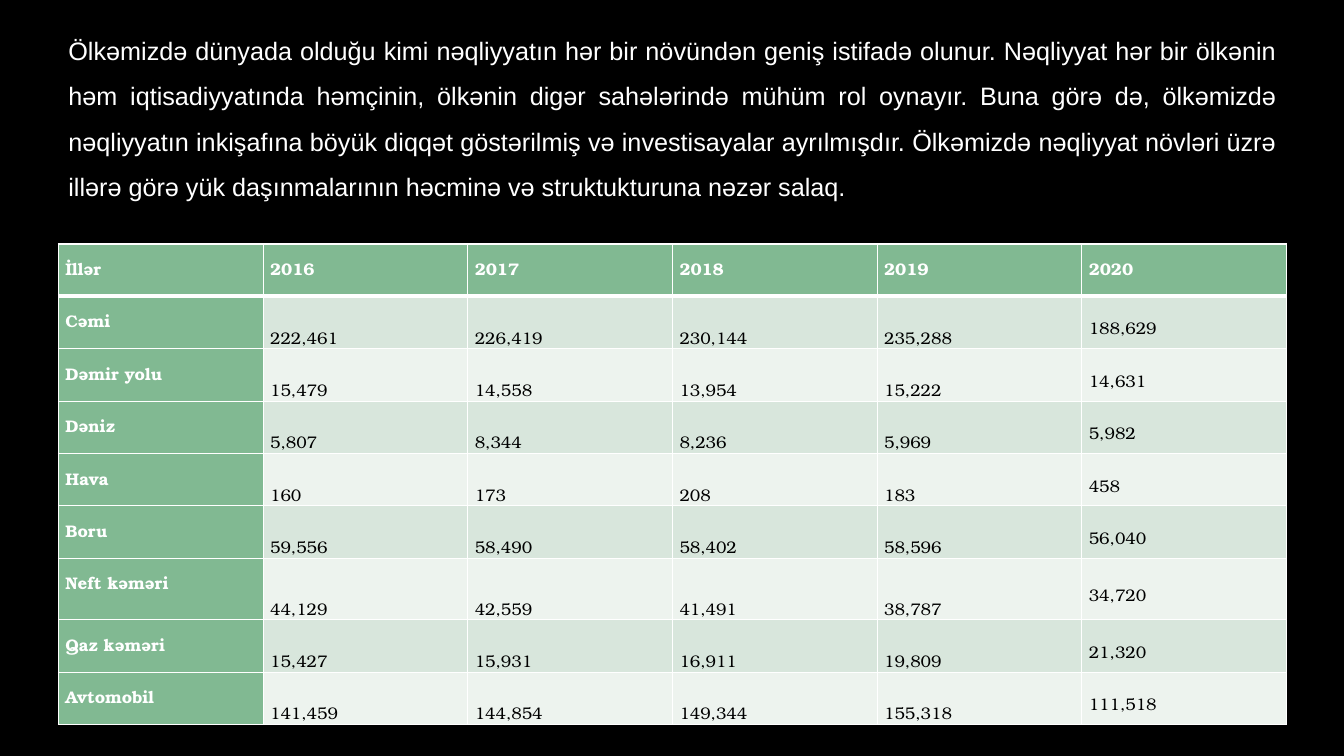
from lxml import etree
from pptx import Presentation
from pptx.dml.color import RGBColor as Rgb
from pptx.enum.text import MSO_ANCHOR as Anchor, MSO_AUTO_SIZE as Fit, PP_ALIGN as Align
from pptx.oxml.ns import qn
from pptx.util import Inches, Pt

BLACK = Rgb(0x00, 0x00, 0x00)
WHITE = Rgb(0xFF, 0xFF, 0xFF)
GREEN = Rgb(0x81, 0xB9, 0x92)
BANDS = [Rgb(0xD8, 0xE6, 0xDC), Rgb(0xED, 0xF3, 0xEE)]

INTRO = (
    "Ölkəmizdə dünyada olduğu kimi nəqliyyatın hər bir növündən geniş istifadə olunur. "
    "Nəqliyyat hər bir ölkənin həm iqtisadiyyatında həmçinin, ölkənin digər sahələrində "
    "mühüm rol oynayır. Buna görə də, ölkəmizdə nəqliyyatın inkişafına böyük diqqət "
    "göstərilmiş və investisayalar ayrılmışdır. Ölkəmizdə nəqliyyat növləri üzrə illərə "
    "görə yük daşınmalarının həcminə və struktukturuna nəzər salaq."
)
ROWS = [
    ["İllər", "2016", "2017", "2018", "2019", "2020"],
    ["Cəmi", "222,461", "226,419", "230,144", "235,288", "188,629"],
    ["Dəmir yolu", "15,479", "14,558", "13,954", "15,222", "14,631"],
    ["Dəniz", "5,807", "8,344", "8,236", "5,969", "5,982"],
    ["Hava", "160", "173", "208", "183", "458"],
    ["Boru", "59,556", "58,490", "58,402", "58,596", "56,040"],
    ["Neft kəməri", "44,129", "42,559", "41,491", "38,787", "34,720"],
    ["Qaz kəməri", "15,427", "15,931", "16,911", "19,809", "21,320"],
    ["Avtomobil", "141,459", "144,854", "149,344", "155,318", "111,518"],
]
TALL = "Neft kəməri"

PARA = {"alignment": Align.JUSTIFY, "line_spacing": 1.5,
        "space_before": Pt(0), "space_after": Pt(8)}
BODY = {"name": "Arial", "size": Pt(18)}
HEAD = {"name": "TeX Gyre Bonum", "size": Pt(12), "bold": True}
DATA = {**HEAD, "bold": False}
INSET = {"margin_left": Inches(0.07), "margin_right": Inches(0.07),
         "margin_top": 0, "margin_bottom": 0}


def put(item, look):
    for name, value in look.items():
        setattr(item, name, value)


def write(frame, text, look, color):
    para = frame.paragraphs[0]
    put(para, PARA)
    run = para.add_run()
    run.text = text
    put(run.font, look)
    run.font.color.rgb = color


def edge(cell, widths):
    """Draw the white borders of a cell, widths in points by side."""
    props = cell._tc.get_or_add_tcPr()
    for side, width in widths.items():
        line = etree.SubElement(props, qn(f"a:ln{side}"), w=str(Pt(width)))
        fill = etree.SubElement(line, qn("a:solidFill"))
        etree.SubElement(fill, qn("a:srgbClr"), val=str(WHITE))


def intro(slide, left, top, width, height):
    box = slide.shapes.add_textbox(left, top, width, height)
    put(box.text_frame, {"word_wrap": True, "auto_size": Fit.SHAPE_TO_FIT_TEXT})
    write(box.text_frame, INTRO, BODY, WHITE)


def freight(slide, left, top, width, height):
    count = len(ROWS[0])
    table = slide.shapes.add_table(len(ROWS), count, left, top, width, height).table
    for col in table.columns:
        col.width = width // count
    for i, row in enumerate(ROWS):
        table.rows[i].height = Inches(0.61 if row[0] == TALL else 0.52)
        for j, text in enumerate(row):
            cell = table.cell(i, j)
            label = i == 0 or j == 0
            put(cell, INSET)
            # Labels sit at the top, the last year in the middle
            if not label:
                cell.vertical_anchor = Anchor.MIDDLE if j == count - 1 else Anchor.BOTTOM
            # A thick rule parts the header from the data
            edge(cell, {"L": 1, "R": 1, "T": 3 if i == 1 else 1, "B": 3 if i == 0 else 1})
            cell.fill.solid()
            cell.fill.fore_color.rgb = GREEN if label else BANDS[(i - 1) % 2]
            write(cell.text_frame, text, HEAD if label else DATA, WHITE if label else BLACK)


def main():
    deck = Presentation()
    put(deck, {"slide_width": Inches(13.33), "slide_height": Inches(7.5)})
    slide = deck.slides.add_slide(deck.slide_layouts[6])
    slide.background.fill.solid()
    slide.background.fill.fore_color.rgb = BLACK
    left, width = Inches(0.58), Inches(12.18)
    # Opening text
    intro(slide, left, Inches(0.15), width, Inches(1.87))
    # Freight by transport type and year
    freight(slide, left, Inches(2.42), width, Inches(4.75))
    deck.save("out.pptx")


if __name__ == "__main__":
    main()
